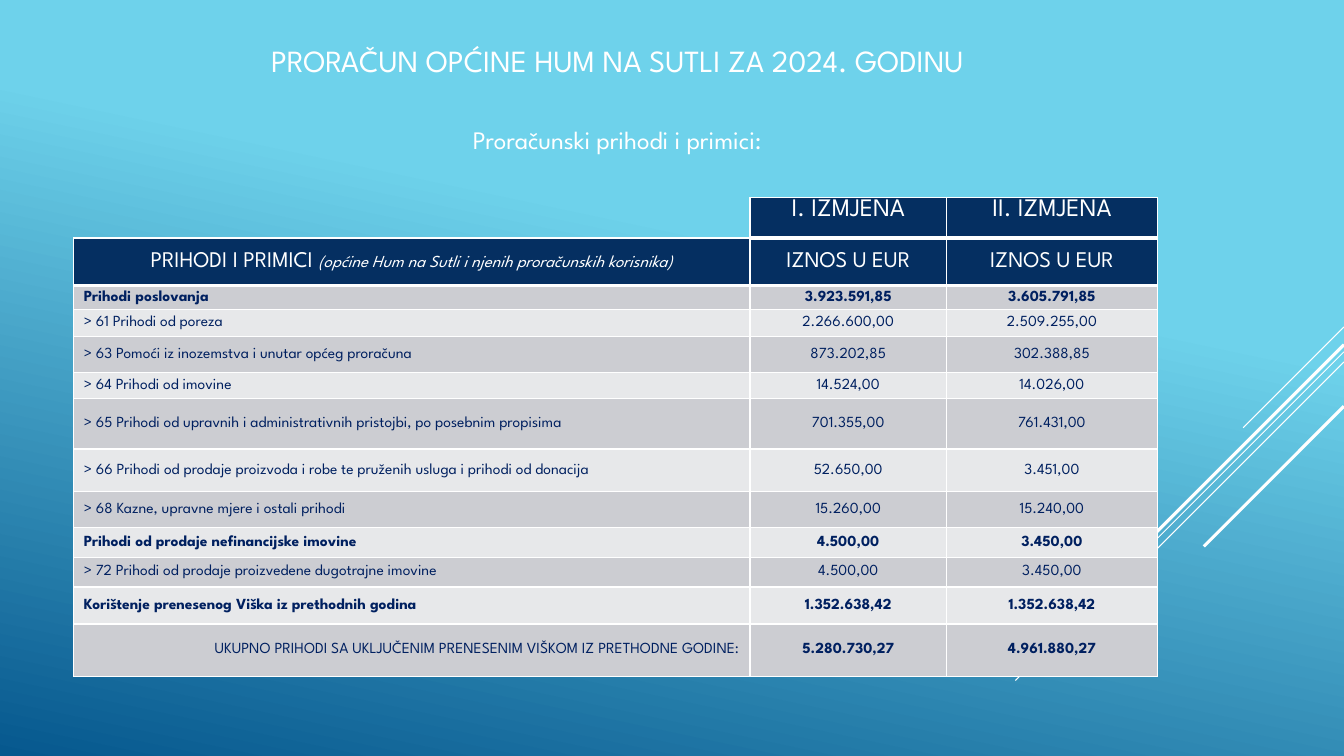
from lxml import etree
from pptx import Presentation
from pptx import util as u
from pptx.dml.color import RGBColor
from pptx.enum import shapes, text
from pptx.oxml import ns

Pt = u.Pt
WHITE = RGBColor(0xFF, 0xFF, 0xFF)
NAVY = RGBColor(0x05, 0x2F, 0x61)
INK = RGBColor(0x00, 0x20, 0x60)
DARK_BAND = RGBColor(0xCC, 0xCD, 0xD2)
LIGHT_BAND = RGBColor(0xE7, 0xE8, 0xEA)
SKY = RGBColor(0x6E, 0xD2, 0xEB)
DEEP = RGBColor(0x06, 0x58, 0x8E)
FONT = "League Spartan"
LEFT, CENTER, RIGHT = (text.PP_ALIGN.LEFT, text.PP_ALIGN.CENTER,
                       text.PP_ALIGN.RIGHT)
MIDDLE, TOP = text.MSO_ANCHOR.MIDDLE, text.MSO_ANCHOR.TOP

COLUMNS = [483, 140.5, 150.5]
HEADER_HEIGHT = 34
REVENUES = [
    (17.3, True, "Prihodi poslovanja", "3.923.591,85", "3.605.791,85"),
    (19.3, False, "> 61 Prihodi od poreza", "2.266.600,00", "2.509.255,00"),
    (25.5, False, "> 63 Pomoći iz inozemstva i unutar općeg proračuna",
     "873.202,85", "302.388,85"),
    (18.7, False, "> 64 Prihodi od imovine", "14.524,00", "14.026,00"),
    (36, False, "> 65 Prihodi od upravnih i administrativnih pristojbi, "
     "po posebnim propisima", "701.355,00", "761.431,00"),
    (30.5, False, "> 66 Prihodi od prodaje proizvoda i robe te pruženih usluga "
     "i prihodi od donacija", "52.650,00", "3.451,00"),
    (25.8, False, "> 68 Kazne, upravne mjere i ostali prihodi",
     "15.260,00", "15.240,00"),
    (21.3, True, "Prihodi od prodaje nefinancijske imovine",
     "4.500,00", "3.450,00"),
    (21, False, "> 72 Prihodi od prodaje proizvedene dugotrajne imovine",
     "4.500,00", "3.450,00"),
    (26.5, True, "Korištenje prenesenog Viška iz prethodnih godina",
     "1.352.638,42", "1.352.638,42"),
]
TOTAL = ("UKUPNO PRIHODI SA UKLJUČENIM PRENESENIM VIŠKOM IZ PRETHODNE GODINE:",
         "5.280.730,27", "4.961.880,27")
TOTAL_HEIGHT = 37.3


def apply(target, **values):
    for name, value in values.items():
        setattr(target, name, value)


def add_run(p, words, size, color=WHITE, bold=False, italic=False):
    r = p.add_run()
    r.text = words
    apply(r.font, name=FONT, size=Pt(size), bold=bold, italic=italic)
    r.font.color.rgb = color


def set_borders(cell, bottom):
    tc_pr = cell._tc.get_or_add_tcPr()
    for i, (side, width) in enumerate(
            [("lnL", 1), ("lnR", 1), ("lnT", 1), ("lnB", bottom)]):
        ln = etree.Element(ns.qn(f"a:{side}"), w=str(Pt(width)))
        fill = etree.SubElement(ln, ns.qn("a:solidFill"))
        etree.SubElement(fill, ns.qn("a:srgbClr"), val=str(WHITE))
        tc_pr.insert(i, ln)


def fill_cell(cell, runs, fill, align=CENTER, anchor=MIDDLE, bottom=1,
              margin_top=0):
    apply(cell, vertical_anchor=anchor, margin_top=Pt(margin_top),
          margin_bottom=0)
    cell.fill.solid()
    cell.fill.fore_color.rgb = fill
    set_borders(cell, bottom)
    p = cell.text_frame.paragraphs[0]
    p.alignment = align
    for words, style in runs:
        add_run(p, words, **style)


def add_grid(slide, left, top, widths, heights):
    table = slide.shapes.add_table(
        len(heights), len(widths), Pt(left), Pt(top),
        Pt(sum(widths)), Pt(sum(heights))).table
    apply(table, first_row=False, horz_banding=False)
    for column, width in zip(table.columns, widths):
        column.width = Pt(width)
    for row, height in zip(table.rows, heights):
        row.height = Pt(height)
    return table


def add_background(slide):
    fill = slide.background.fill
    fill.gradient()
    fill.gradient_angle = 258
    for stop, color, position in zip(fill.gradient_stops, (SKY, DEEP), (0.35, 1)):
        stop.color.rgb = color
        stop.position = position


def add_rays(slide, right):
    for top, run, width in [(233.5, 72, 0.75), (251.3, 234.7, 0.75),
                            (258.5, 149.3, 0.75), (246.2, 137.5, 2.25),
                            (290.2, 100.1, 2.25)]:
        ray = slide.shapes.add_connector(
            shapes.MSO_CONNECTOR.STRAIGHT, Pt(right), Pt(top),
            Pt(right - run), Pt(top + run))
        ray.line.color.rgb = WHITE
        ray.line.width = Pt(width)
        etree.SubElement(ray._element.spPr, ns.qn("a:effectLst"))


def add_title(slide, left, top, width, height):
    title = slide.shapes.title
    apply(title, left=Pt(left), top=Pt(top), width=Pt(width), height=Pt(height))
    tf = title.text_frame
    apply(tf, vertical_anchor=TOP, margin_top=Pt(10), word_wrap=True,
          auto_size=text.MSO_AUTO_SIZE.NONE)
    heading, subheading = tf.paragraphs[0], tf.add_paragraph()
    for p in (heading, subheading):
        apply(p, alignment=CENTER, line_spacing=1.0, space_before=Pt(0))
    heading.space_after = Pt(33)
    add_run(heading, "PRORAČUN OPĆINE HUM NA SUTLI ZA 2024. GODINU", 22)
    add_run(subheading, "Proračunski prihodi i primici:", 18)


def add_revenue_table(slide, left, top):
    heights = [HEADER_HEIGHT, *(row[0] for row in REVENUES), TOTAL_HEIGHT]
    table = add_grid(slide, left, top, COLUMNS, heights)
    amount = [("IZNOS U EUR", dict(size=16))]
    headers = [[("PRIHODI I PRIMICI ", dict(size=16)),
                ("(općine Hum na Sutli i njenih proračunskih korisnika)",
                 dict(size=12, italic=True))], amount, amount]
    for c, runs in enumerate(headers):
        fill_cell(table.cell(0, c), runs, NAVY, bottom=3)
    body = [((bold, bold, bold), LEFT, words) for _, bold, *words in REVENUES]
    body.append(((False, True, True), RIGHT, TOTAL))
    for i, (bolds, label_align, words) in enumerate(body):
        band = LIGHT_BAND if i % 2 else DARK_BAND
        for c, (bold, word) in enumerate(zip(bolds, words)):
            fill_cell(table.cell(i + 1, c),
                      [(word, dict(size=11, color=INK, bold=bold))], band,
                      CENTER if c else label_align)


def add_amendment_table(slide, left, top, height):
    table = add_grid(slide, left, top, COLUMNS[1:], [height])
    for c, words in enumerate(["I. IZMJENA", "II. IZMJENA"]):
        fill_cell(table.cell(0, c), [(words, dict(size=18))], NAVY,
                  anchor=TOP, bottom=3, margin_top=1)


def main():
    prs = Presentation()
    apply(prs, slide_width=Pt(960), slide_height=Pt(540))
    slide = prs.slides.add_slide(prs.slide_layouts[5])
    add_background(slide)
    add_rays(slide, 960)
    add_title(slide, 60, 19.5, 762, 108)
    add_revenue_table(slide, 52.7, 170)
    add_amendment_table(slide, 52.7 + COLUMNS[0], 141, 29)
    prs.save("out.pptx")


if __name__ == "__main__":
    main()
